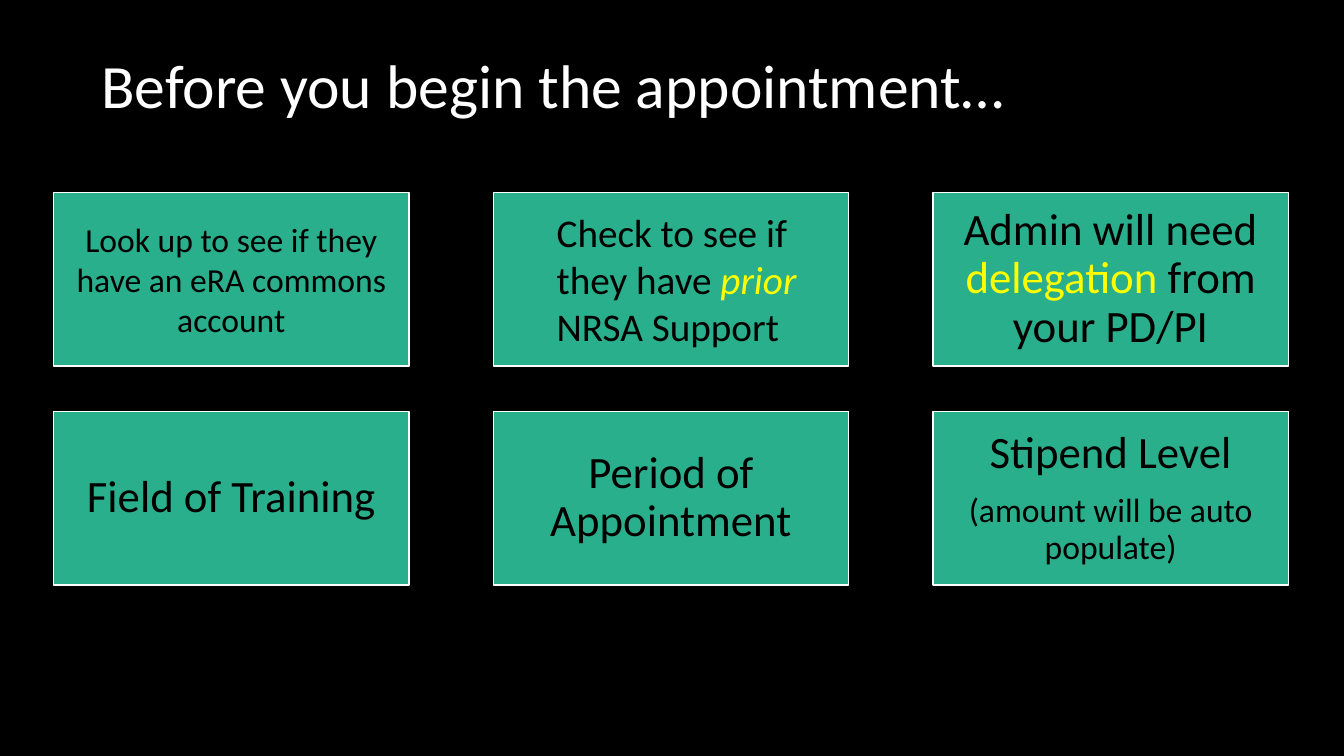
from pptx import Presentation
from pptx import util as u
from pptx.dml.color import RGBColor
from pptx.enum import shapes, text

HUES = {"back": "000000", "ink": "000000", "light": "FFFFFF",
        "card": "29AF8C", "mark": "FFFF00"}
MID = text.PP_ALIGN.CENTER
TIGHT = {"alignment": MID, "line_spacing": 0.9, "space_after": u.Pt(11)}


def hue(name):
    return RGBColor.from_string(HUES[name])


def apply(item, style):
    for key, value in style.items():
        setattr(item, key, value)


class Deck:
    """Holds the style and the current slide."""

    def __init__(self):
        self.prs = Presentation()
        apply(self.prs, {"slide_width": u.Cm(33.87), "slide_height": u.Cm(19.05)})
        self.slide = self.prs.slides.add_slide(self.prs.slide_layouts[6])
        fill = self.slide.background.fill
        fill.solid()
        fill.fore_color.rgb = hue("back")

    def label(self, frame, paras, ink):
        apply(frame, {"word_wrap": True, "vertical_anchor": text.MSO_ANCHOR.MIDDLE})
        for i, (size, style, runs) in enumerate(paras):
            para = frame.add_paragraph() if i else frame.paragraphs[0]
            apply(para, style)
            if para.level:
                para._p.get_or_add_pPr().set("marL", str(u.Cm(1.27)))
            for words, look in runs:
                run = para.add_run()
                run.text = words
                base = {"name": "Calibri", "size": u.Pt(size)}
                apply(run.font, {**base, "italic": look.get("italic", False)})
                run.font.color.rgb = hue(look.get("hue", ink))

    def title(self, words, box):
        shape = self.slide.shapes.add_textbox(*map(u.Cm, box))
        para = (44, {"line_spacing": 0.9}, [(words, {})])
        self.label(shape.text_frame, [para], "light")

    def card(self, paras, box):
        kind = shapes.MSO_SHAPE.RECTANGLE
        shape = self.slide.shapes.add_shape(kind, *map(u.Cm, box))
        shape.shadow.inherit = False
        shape.fill.solid()
        shape.fill.fore_color.rgb = hue("card")
        shape.line.color.rgb = hue("light")
        shape.line.width = u.Pt(1)
        sides = ("left", "right", "top", "bottom")
        apply(shape.text_frame, {f"margin_{side}": u.Cm(0.33) for side in sides})
        self.label(shape.text_frame, paras, "ink")


CARDS = [
    [(24, {"alignment": MID},
      [("Look up to see if they have an eRA commons account", {})])],
    [(28, {"alignment": text.PP_ALIGN.LEFT, "level": 1},
      [("Check to see if they have ", {}),
       ("prior ", {"hue": "mark", "italic": True}),
       ("NRSA Support", {})])],
    [(32, TIGHT,
      [("Admin will need ", {}), ("delegation", {"hue": "mark"}),
       (" from your PD/PI", {})])],
    [(32, TIGHT, [("Field of Training", {})])],
    [(32, TIGHT, [("Period of Appointment", {})])],
    [(32, TIGHT, [("Stipend Level", {})]),
     (24, TIGHT, [("(amount will be auto populate)", {})])],
]


def main():
    deck = Deck()
    deck.title("Before you begin the appointment…", (2.31, 0.38, 29.21, 3.68))
    for i, paras in enumerate(CARDS):
        row, col = divmod(i, 3)
        deck.card(paras, (1.35 + col * 11.08, 4.85 + row * 5.52, 8.96, 4.37))
    deck.prs.save("out.pptx")


if __name__ == "__main__":
    main()
